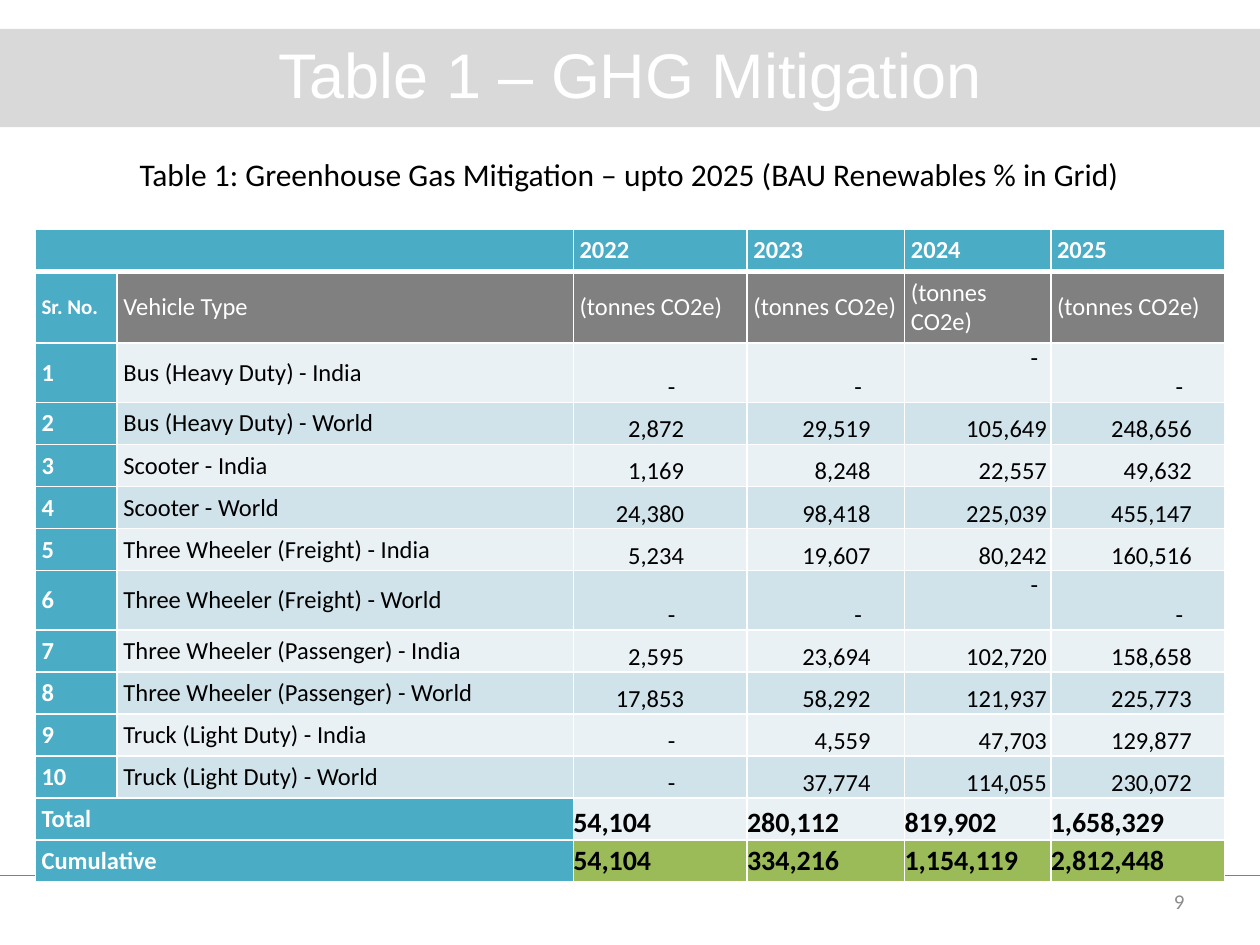
"""Build the GHG mitigation table slide."""
from lxml.etree import SubElement as Sub
from pptx import Presentation
from pptx.dml.color import RGBColor
from pptx.enum.dml import MSO_LINE as Dash
from pptx.enum.shapes import MSO_CONNECTOR as Conn, MSO_SHAPE as Shape
from pptx.enum.text import MSO_ANCHOR as Anchor, PP_ALIGN as Align
from pptx.oxml.ns import qn
from pptx.util import Inches, Pt

WHITE = RGBColor(0xFF, 0xFF, 0xFF)
BLACK = RGBColor(0, 0, 0)
SILVER = RGBColor(0xD9, 0xD9, 0xD9)
GRAY = RGBColor(0x80, 0x80, 0x80)
ASH = RGBColor(0x8C, 0x8C, 0x8C)
TEAL = RGBColor(0x4B, 0xAC, 0xC6)
PALE = RGBColor(0xE9, 0xF1, 0xF5)
MIST = RGBColor(0xD0, 0xE3, 0xEA)
GREEN = RGBColor(0x9B, 0xBB, 0x59)

YEARS = ["2022", "2023", "2024", "2025"]
FLEET = [
    ("Bus (Heavy Duty) - India", "-", "-", "-", "-"),
    ("Bus (Heavy Duty) - World", "2,872", "29,519", "105,649", "248,656"),
    ("Scooter - India", "1,169", "8,248", "22,557", "49,632"),
    ("Scooter - World", "24,380", "98,418", "225,039", "455,147"),
    ("Three Wheeler (Freight) - India", "5,234", "19,607", "80,242", "160,516"),
    ("Three Wheeler (Freight) - World", "-", "-", "-", "-"),
    ("Three Wheeler (Passenger) - India", "2,595", "23,694", "102,720", "158,658"),
    ("Three Wheeler (Passenger) - World", "17,853", "58,292", "121,937", "225,773"),
    ("Truck (Light Duty) - India", "-", "4,559", "47,703", "129,877"),
    ("Truck (Light Duty) - World", "-", "37,774", "114,055", "230,072"),
]
SUMS = [
    ("Total", PALE, Anchor.BOTTOM, ["54,104", "280,112", "819,902", "1,658,329"]),
    ("Cumulative", GREEN, Anchor.MIDDLE,
     ["54,104", "334,216", "1,154,119", "2,812,448"]),
]
WIDTHS = [0.65, 3.62, 1.38, 1.25, 1.16, 1.38]
INSETS = [0.5, 0.27, 0.03, 0.26]


def write(frame, text, size, color, bold=False, align=Align.LEFT, font="Calibri"):
    para = frame.paragraphs[0]
    para.alignment = align
    run = para.add_run()
    run.text = text
    run.font.name = font
    run.font.size = Pt(size)
    run.font.bold = bold
    run.font.color.rgb = color


def paint(cell, fill, text="", size=14, color=WHITE, bold=False, pad=0.05,
          anchor=Anchor.MIDDLE, align=Align.LEFT, right=None, base=1):
    props = cell._tc.get_or_add_tcPr()
    for side, width in (("L", 1), ("R", 1), ("T", 1), ("B", base)):
        line = Sub(props, qn(f"a:ln{side}"), w=str(Pt(width)))
        Sub(Sub(line, qn("a:solidFill")), qn("a:srgbClr"), val=str(WHITE))
    cell.fill.solid()
    cell.fill.fore_color.rgb = fill
    cell.vertical_anchor = anchor
    gap = Inches(pad if text else 0)
    cell.margin_left = cell.margin_top = cell.margin_bottom = gap
    cell.margin_right = gap if right is None else Inches(right)
    if text:
        write(cell.text_frame, text, size, color, bold, align)


deck = Presentation()
deck.slide_width, deck.slide_height = Inches(10), Inches(7.5)
slide = deck.slides.add_slide(deck.slide_layouts[6])
shapes = slide.shapes

band = shapes.add_shape(Shape.RECTANGLE, 0, Inches(0.23), Inches(10), Inches(0.78))
band.shadow.inherit = False
band.fill.solid()
band.fill.fore_color.rgb = SILVER
band.line.fill.background()

rule = shapes.add_connector(Conn.STRAIGHT, 0, Inches(6.95), Inches(10), Inches(6.95))
rule.line.color.rgb = GRAY
rule.line.width = Pt(0.25)
rule.line.dash_style = Dash.ROUND_DOT
Sub(rule._element.spPr, qn("a:effectLst"))

LABELS = [
    ((7.17, 6.95, 2.33, 0.4), "9", 12, ASH, Align.RIGHT, "Calibri", Anchor.MIDDLE),
    ((0, 0.23, 10, 0.7), "Table 1 – GHG Mitigation", 36, WHITE, Align.CENTER,
     "Arial", Anchor.MIDDLE),
    ((0.03, 1.18, 9.93, 0.4),
     "Table 1: Greenhouse Gas Mitigation – upto 2025 (BAU Renewables % in Grid)",
     18, BLACK, Align.CENTER, "Calibri", Anchor.TOP),
]
for place, text, size, color, align, font, anchor in LABELS:
    frame = shapes.add_textbox(*map(Inches, place)).text_frame
    frame.word_wrap = True
    frame.vertical_anchor = anchor
    write(frame, text, size, color, align=align, font=font)

heights = [0.33, 0.57] + [0.47 if row[3] == "-" else 0.33 for row in FLEET] + [0.33] * 2
table = shapes.add_table(len(heights), len(WIDTHS), Inches(0.28), Inches(1.82),
                         Inches(sum(WIDTHS)), Inches(sum(heights))).table
table.first_row = table.horz_banding = False
for col, width in zip(table.columns, WIDTHS):
    col.width = Inches(width)
for row, height in zip(table.rows, heights):
    row.height = Inches(height)

for c in range(2):
    paint(table.cell(0, c), TEAL, base=3)
table.cell(0, 0).merge(table.cell(0, 1))
paint(table.cell(1, 0), TEAL, "Sr. No.", 12, bold=True)
paint(table.cell(1, 1), GRAY, "Vehicle Type")
for c, year in enumerate(YEARS, 2):
    paint(table.cell(0, c), TEAL, year, bold=True, base=3)
    paint(table.cell(1, c), GRAY, "(tonnes CO2e)")

for n, (name, *vals) in enumerate(FLEET, 1):
    fill = PALE if n % 2 else MIST
    paint(table.cell(n + 1, 0), TEAL, str(n), bold=True)
    paint(table.cell(n + 1, 1), fill, name, color=BLACK)
    for c, (val, inset) in enumerate(zip(vals, INSETS), 2):
        blank = val == "-"
        anchor = Anchor.TOP if blank and c == 4 else Anchor.BOTTOM
        paint(table.cell(n + 1, c), fill, val, color=BLACK, pad=0, anchor=anchor,
              align=Align.RIGHT, right=inset + 0.07 * blank)

for r, (name, fill, anchor, vals) in enumerate(SUMS, len(FLEET) + 2):
    paint(table.cell(r, 0), TEAL, name, bold=True)
    paint(table.cell(r, 1), TEAL)
    table.cell(r, 0).merge(table.cell(r, 1))
    for c, val in enumerate(vals, 2):
        paint(table.cell(r, c), fill, val, 16, BLACK, True, 0, anchor)

deck.save("out.pptx")
